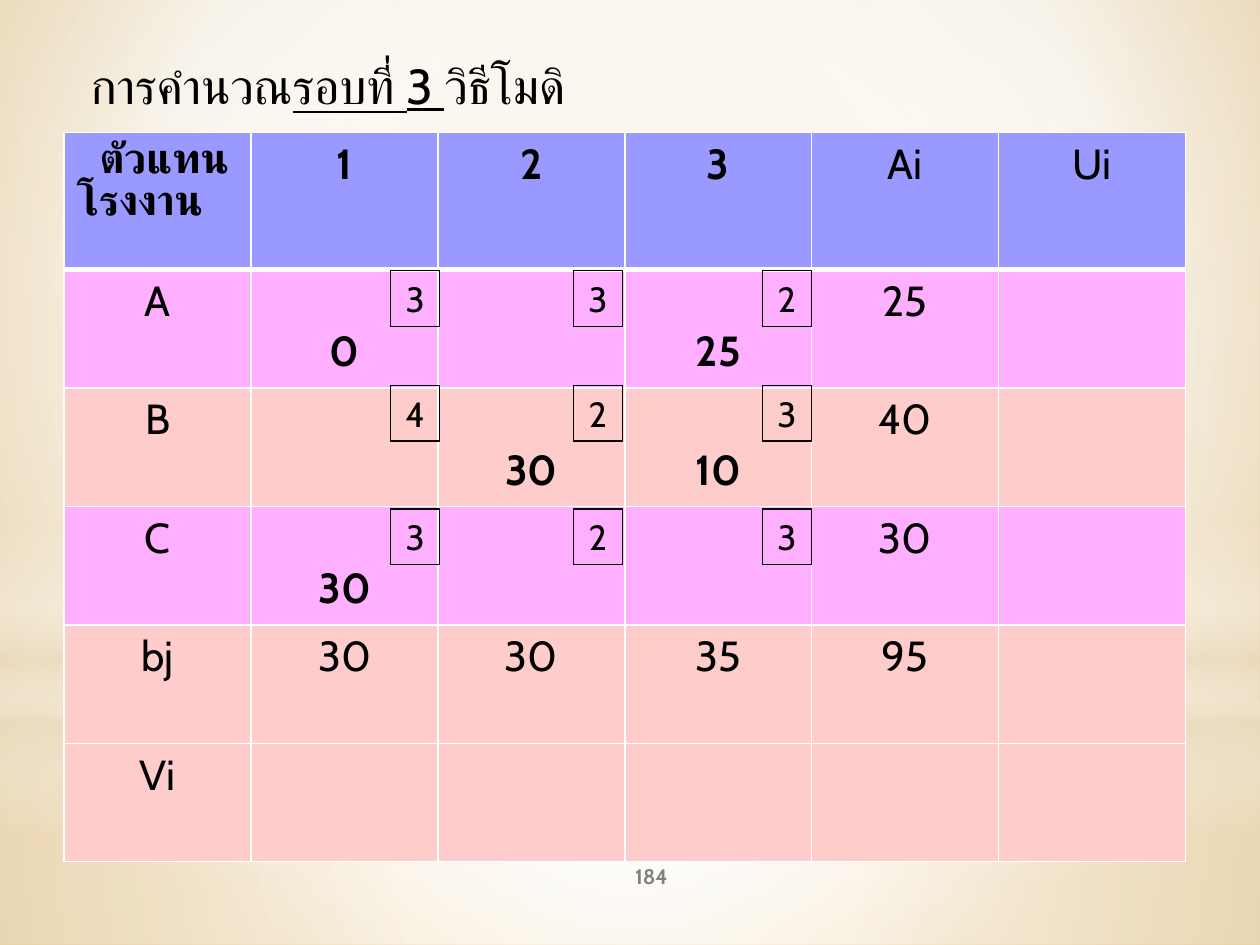
import pptx
import pptx.util
import pptx.dml.color
import pptx.enum.shapes
import pptx.enum.text
import pptx.oxml
import pptx.oxml.ns

Inches, Pt = pptx.util.Inches, pptx.util.Pt
RGB = pptx.dml.color.RGBColor.from_string
SHAPE = pptx.enum.shapes.MSO_SHAPE
CENTER = pptx.enum.text.PP_ALIGN.CENTER
NS = pptx.oxml.ns.nsdecls("a")


def set_gradient(element, stops, to=None):
    """Replace a gradient's stops; circular towards `to`, else top to bottom."""
    grad = next(element.iter(pptx.oxml.ns.qn("a:gradFill")))
    for child in list(grad):
        grad.remove(child)
    gs = "".join(
        f'<a:gs pos="{pos * 1000}"><a:srgbClr val="{color}">'
        f'<a:alpha val="{alpha * 1000}"/></a:srgbClr></a:gs>'
        for pos, color, alpha in stops)
    grad.append(pptx.oxml.parse_xml(f"<a:gsLst {NS}>{gs}</a:gsLst>"))
    if to:
        l, t, r, b = (v * 1000 for v in to)
        grad.append(pptx.oxml.parse_xml(
            f'<a:path {NS} path="circle">'
            f'<a:fillToRect l="{l}" t="{t}" r="{r}" b="{b}"/></a:path>'))
    else:
        grad.append(pptx.oxml.parse_xml(f'<a:lin {NS} ang="5400000" scaled="0"/>'))


def style(p, size, bold=False, color="000000"):
    p.font.name = "Cabin"
    p.font.size = Pt(size)
    p.font.bold = bold
    p.font.color.rgb = RGB(color)


prs = pptx.Presentation()
prs.slide_width, prs.slide_height = Inches(10), Inches(7.5)
s = prs.slides.add_slide(prs.slide_layouts[6])

# Background
s.background.fill.gradient()
set_gradient(s.background._cSld,
             [(0, "ECD7B0", 100), (60, "FFFFFF", 100), (100, "E6BE74", 100)],
             (20, 10, 20, 60))

# Translucent layers over the background
middle = (50, 50, 50, 50)
layers = [
    (SHAPE.RECTANGLE, 5.58, 1.92, middle,
     [(0, "FFFFFF", 91), (37, "FFFFFF", 76), (100, "EBDDC3", 79)]),
    (SHAPE.RECTANGLE, 0, 5.58, middle,
     [(0, "FFFFFF", 89), (48, "FFFFFF", 62), (100, "EBDDC3", 79)]),
    (SHAPE.RECTANGLE, 4.12, 2.5, None,
     [(0, "FFFFFF", 0), (29, "FFFFFF", 30), (45, "EBDDC3", 40),
      (55, "FFFFFF", 26), (65, "EBDDC3", 60), (100, "FFFFFF", 0)]),
    (SHAPE.OVAL, 1.75, 5.58, middle,
     [(0, "FFFFFF", 100), (56, "FFFFFF", 0)]),
]
for kind, top, height, to, stops in layers:
    sp = s.shapes.add_shape(kind, 0, Inches(top), Inches(10), Inches(height))
    sp.shadow.inherit = False
    sp.line.fill.background()
    sp.fill.gradient()
    set_gradient(sp._element.spPr, stops, to)

# Slide number
tf = s.shapes.add_textbox(Inches(4.17), Inches(6.75), Inches(2), Inches(0.4)).text_frame
tf.word_wrap = True
tf.vertical_anchor = pptx.enum.text.MSO_ANCHOR.MIDDLE
p = tf.paragraphs[0]
p.text = "184"
p.alignment = CENTER
style(p, 12, True, "808080")

# Transport table
rows = [
    ["ตัวแทน\nโรงงาน", "1", "2", "3", "Ai", "Ui"],
    ["A", "0", "", "25", "25", ""],
    ["B", "", "30", "10", "40", ""],
    ["C", "30", "", "", "30", ""],
    ["bj", "30", "30", "35", "95", ""],
    ["Vi", "", "", "", "", ""],
]
fills = ["9999FF", "FFAFFF", "FFCCCC", "FFAFFF", "FFCCCC", "FFCCCC"]
table = s.shapes.add_table(6, 6, Inches(0.51), Inches(1.05),
                           Inches(8.9), Inches(5.78)).table
for i, row in enumerate(rows):
    table.rows[i].height = Inches(0.94 if i else 1.09)
    for j, text in enumerate(row):
        cell = table.cell(i, j)
        cell.text = text
        allocation = 1 <= i <= 3 and 1 <= j <= 3
        if allocation:
            cell.margin_top = Inches(0.45)
        for p in cell.text_frame.paragraphs:
            style(p, 24, allocation or (i == 0 and j <= 3))
            p.alignment = CENTER
        for side in "LRTB":
            heavy = (i, side) in ((0, "B"), (1, "T"))
            cell._tc.get_or_add_tcPr().append(pptx.oxml.parse_xml(
                f'<a:ln{side} {NS} w="{Pt(3 if heavy else 1)}"><a:solidFill>'
                f'<a:srgbClr val="FFFFFF"/></a:solidFill></a:ln{side}>'))
        cell.fill.solid()
        cell.fill.fore_color.rgb = RGB(fills[i])
for column in table.columns:
    column.width = Inches(8.9 / 6)

# Corner cell: two left-aligned lines, the first one indented
corner = table.cell(0, 0).text_frame.paragraphs
for p in corner:
    p.alignment = pptx.enum.text.PP_ALIGN.LEFT
    p.line_spacing = Pt(24.5)
corner[0]._p.get_or_add_pPr().set("marL", str(Inches(0.18)))

# Unit costs in the cell corners
costs = ["332", "423", "323"]
for top, row in zip([2.15, 3.06, 4.04], costs):
    for left, cost in zip([3.1, 4.55, 6.05], row):
        sp = s.shapes.add_shape(SHAPE.RECTANGLE, Inches(left), Inches(top),
                                Inches(0.39), Inches(0.44))
        sp.shadow.inherit = False
        sp.fill.background()
        sp.line.color.rgb = RGB("000000")
        sp.line.width = Pt(0.75)
        tf = sp.text_frame
        tf.word_wrap = False
        p = tf.paragraphs[0]
        p.text = cost
        p.alignment = CENTER
        style(p, 20)

# Title
tf = s.shapes.add_textbox(Inches(0.62), Inches(0.39), Inches(4.58), Inches(0.57)).text_frame
tf.word_wrap = False
p = tf.paragraphs[0]
style(p, 28)
for text, underline in [("การคำนวณ", False), ("รอบที่ 3 ", True), ("วิธีโมดิ", False)]:
    r = p.add_run()
    r.text = text
    r.font.underline = underline

prs.save("out.pptx")
